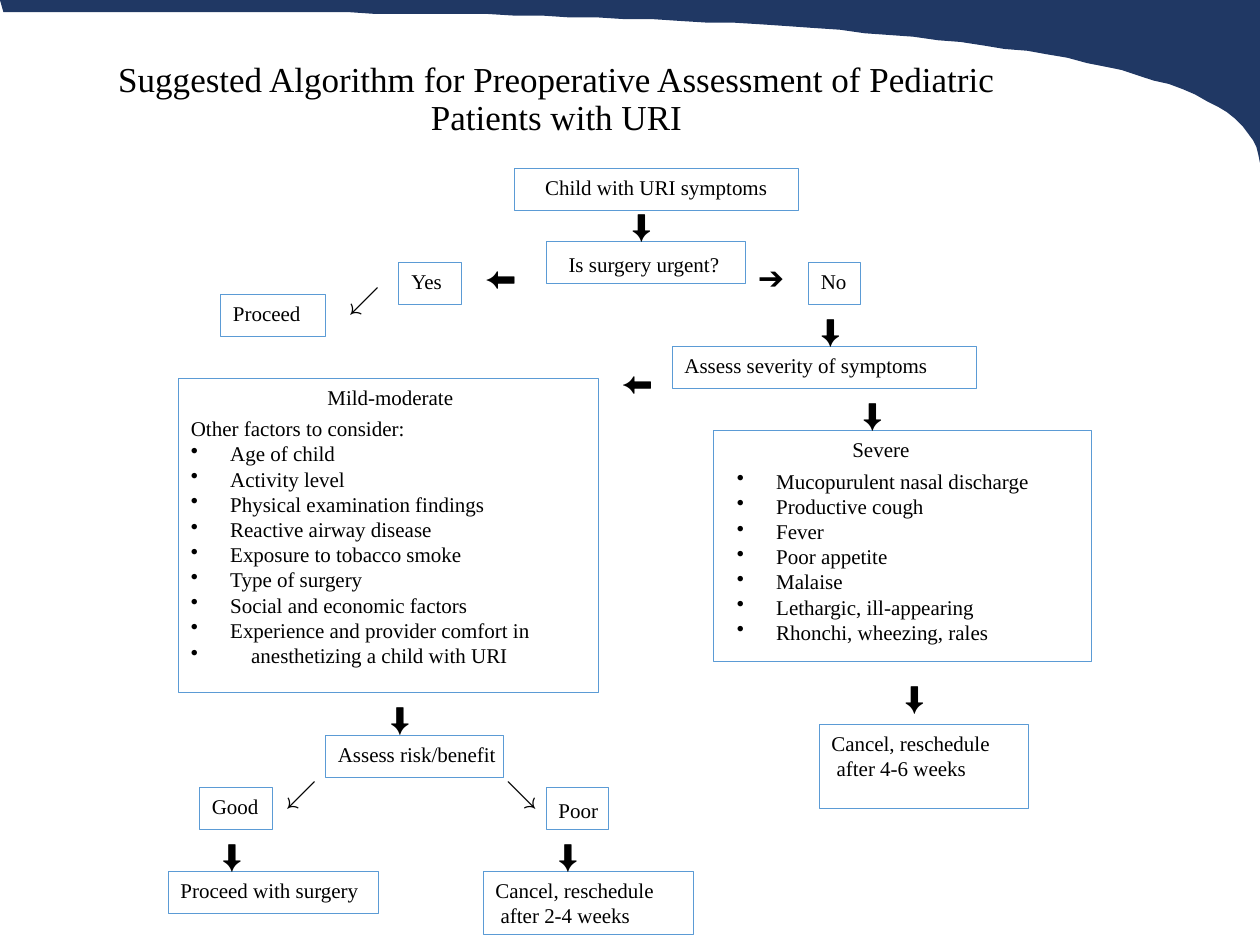
from lxml import etree
from pptx import Presentation
from pptx.dml.color import RGBColor
from pptx.enum.shapes import MSO_SHAPE
from pptx.enum.text import MSO_ANCHOR, MSO_AUTO_SIZE, PP_ALIGN
from pptx.oxml.ns import qn
from pptx.util import Pt

RECTANGLE = MSO_SHAPE.RECTANGLE
LEFT, CENTER = PP_ALIGN.LEFT, PP_ALIGN.CENTER
MIDDLE = MSO_ANCHOR.MIDDLE
FIT_SHAPE = MSO_AUTO_SIZE.SHAPE_TO_FIT_TEXT
SERIF, SANS = "Times New Roman", "Arial"
NAVY, BLUE, BLACK = "203864", "5B9BD5", "000000"


def color(value):
    return RGBColor.from_string(value)


def add_text(left, top, width, height, lines, size=12, font=SERIF, align=LEFT):
    """Add a text box; each line is (text, left margin, first-line indent, bullet)."""
    box = slide.shapes.add_textbox(Pt(left), Pt(top), Pt(width), Pt(height))
    frame = box.text_frame
    frame.word_wrap = True
    frame.auto_size = FIT_SHAPE
    for index, (text, margin, indent, bullet) in enumerate(lines):
        paragraph = frame.add_paragraph() if index else frame.paragraphs[0]
        paragraph.alignment = align
        properties = paragraph._p.get_or_add_pPr()
        if margin:
            properties.set("marL", str(Pt(margin)))
            properties.set("indent", str(Pt(indent)))
        if bullet:
            etree.SubElement(properties, qn("a:buChar")).set("char", bullet)
        run = paragraph.add_run()
        run.text = text
        run.font.size = Pt(size)
        run.font.name = font
        run.font.color.rgb = color(BLACK)
    return frame


presentation = Presentation()
presentation.slide_width, presentation.slide_height = Pt(720), Pt(540)
slide = presentation.slides.add_slide(presentation.slide_layouts[6])

# Corner sweep: the lower edge is a cubic curve sampled into short segments
curve = [(719.5, 93), (719, 0), (242, 7.2), (2, 7.2)]
steps = 60
edge = []
for step in range(steps + 1):
    t = step / steps
    weights = ((1 - t) ** 3, 3 * t * (1 - t) ** 2, 3 * t * t * (1 - t), t ** 3)
    edge.append(tuple(round(sum(w * point[axis] for w, point in zip(weights, curve)), 2)
                      for axis in (0, 1)))
builder = slide.shapes.build_freeform(0, 0, scale=Pt(1))
builder.add_line_segments([(720, 0)] + edge, close=True)
sweep = builder.convert_to_shape()
sweep.shadow.inherit = False
sweep.fill.solid()
sweep.fill.fore_color.rgb = color(NAVY)
sweep.line.fill.background()

title = add_text(
    36, 12, 564, 90,
    [("Suggested Algorithm for Preoperative Assessment of Pediatric Patients with URI", 0, 0, None)],
    size=20, align=CENTER)
title.auto_size = MSO_AUTO_SIZE.NONE
title.vertical_anchor = MIDDLE
title.paragraphs[0].line_spacing = 0.9

# Steps: left, top, width of the label, text, alignment
labels = [
    (222, 96, 306, "Child with URI symptoms", CENTER),
    (311, 140, 114, "Is surgery urgent?", CENTER),
    (228, 150, 36, "Yes", LEFT),
    (462, 150, 30, "No", LEFT),
    (126, 168, 60, "Proceed", LEFT),
    (384, 198, 192, "Assess severity of symptoms", LEFT),
    (180, 216, 171, "Mild-moderate", LEFT),
    (480, 246, 119, "Severe", LEFT),
    (186, 420, 108, "Assess risk/benefit", LEFT),
    (114, 450, 88, "Good", LEFT),
    (312, 452, 60, "Poor", LEFT),
    (96, 498, 168, "Proceed with surgery", LEFT),
]
for left, top, width, text, align in labels:
    add_text(left, top, width, 21.6, [(text, 0, 0, None)], align=align)

for left, top, delay in [(468, 414, "after 4-6 weeks"), (276, 498, "after 2-4 weeks")]:
    add_text(left, top, 163, 36.7, [("Cancel, reschedule", 0, 0, None), (delay, 3, 0, None)])

HANG = 22.5
factors = ["Age of child", "Activity level", "Physical examination findings",
           "Reactive airway disease", "Exposure to tobacco smoke", "Type of surgery",
           "Social and economic factors", "Experience and provider comfort in"]
add_text(102, 234, 216, 153,
         [("Other factors to consider:", 0, 0, None)]
         + [(factor, HANG, -HANG, "•") for factor in factors]
         + [("anesthetizing a child with URI", HANG + 12, -HANG - 12, "•")])

severe_signs = ["Mucopurulent nasal discharge", "Productive cough", "Fever", "Poor appetite",
                "Malaise", "Lethargic, ill-appearing", "Rhonchi, wheezing, rales"]
add_text(414, 264, 260, 109, [(sign, HANG, -HANG, "•") for sign in severe_signs])

# Outlines around the steps: left, top, width, height
outlines = [
    (294, 96, 162, 24), (312, 138, 114, 24), (228, 150, 36, 24), (462, 150, 30, 24),
    (384, 198, 174, 24), (126, 168, 60, 24), (408, 246, 216, 132), (468, 414, 120, 48),
    (102, 216, 240, 180), (186, 420, 102, 24), (312, 450, 36, 24), (114, 450, 42, 24),
    (96, 498, 120, 24), (276, 498, 120, 36),
]
for left, top, width, height in outlines:
    outline = slide.shapes.add_shape(RECTANGLE, Pt(left), Pt(top), Pt(width), Pt(height))
    outline.shadow.inherit = False
    outline.fill.background()
    outline.line.color.rgb = color(BLUE)
    outline.line.width = Pt(0.5)

# Arrow symbols with the left and top of each one
arrows = {
    "⬇": [(354, 114), (462, 174), (486, 222), (510, 384), (216, 396), (120, 474), (312, 474)],
    "⬅": [(270, 144), (348, 204)],
    "➔": [(426, 144)],
    "↙": [(192, 156), (156, 438)],
    "↘": [(282, 438)],
}
for symbol, places in arrows.items():
    for left, top in places:
        add_text(left, top, 42, 29, [(symbol, 0, 0, None)], size=18, font=SANS)

presentation.save("out.pptx")
